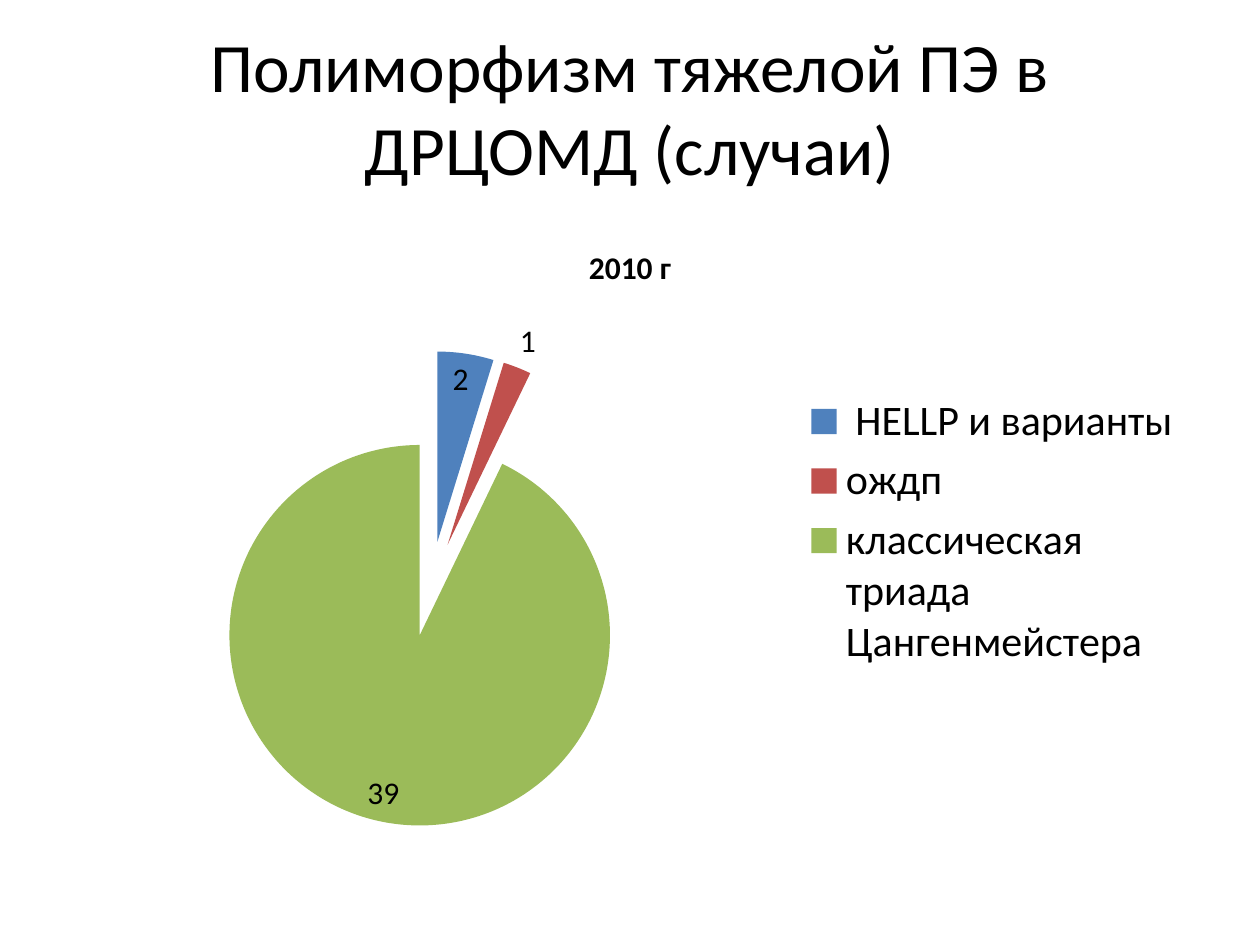
from lxml.etree import Element
from pptx import Presentation
from pptx.chart.data import CategoryChartData
from pptx.dml.color import RGBColor
from pptx.enum.chart import XL_CHART_TYPE, XL_LABEL_POSITION, XL_LEGEND_POSITION
from pptx.enum.text import MSO_ANCHOR, PP_ALIGN
from pptx.oxml.ns import qn
from pptx.util import Inches, Pt

BLACK = RGBColor(0x00, 0x00, 0x00)
BLUE = RGBColor(0x4F, 0x81, 0xBD)
RED = RGBColor(0xC0, 0x50, 0x4D)
GREEN = RGBColor(0x9B, 0xBB, 0x59)

CASES = [
    (" HELLP и варианты", 2, BLUE),
    ("ождп", 1, RED),
    ("классическая триада Цангенмейстера", 39, GREEN),
]


def style(font, size, bold=False):
    look = {"name": "Calibri", "size": Pt(size), "bold": bold}
    for key, value in look.items():
        setattr(font, key, value)
    font.color.rgb = BLACK


deck = Presentation()
deck.slide_width, deck.slide_height = Inches(10), Inches(7.5)
wide, high = deck.slide_width, deck.slide_height
left, width = int(wide * 0.05), int(wide * 0.9)
slide = deck.slides.add_slide(deck.slide_layouts[5])

# Title
title = slide.shapes.title
place = {"left": left, "top": int(high * 0.04),
         "width": width, "height": Inches(1.09)}
for key, value in place.items():
    setattr(title, key, value)
frame = title.text_frame
frame.text = "Полиморфизм тяжелой ПЭ в ДРЦОМД (случаи)"
frame.vertical_anchor = MSO_ANCHOR.MIDDLE
frame.paragraphs[0].alignment = PP_ALIGN.CENTER
style(frame.paragraphs[0].runs[0].font, 39.6)

# Pie of cases
data = CategoryChartData()
data.categories = [name for name, count, color in CASES]
data.add_series("Series 1", [count for name, count, color in CASES])
chart = slide.shapes.add_chart(
    XL_CHART_TYPE.PIE, left, int(high * 0.2333), width, int(high * 0.66), data
).chart
style(chart.font, 18)

chart.has_title = True
head = chart.chart_title.text_frame
head.text = "2010 г"
style(head.paragraphs[0].runs[0].font, 18, bold=True)

chart.has_legend = True
chart.legend.position = XL_LEGEND_POSITION.RIGHT
chart.legend.include_in_layout = False
style(chart.legend.font, 24)

plot = chart.plots[0]
plot.vary_by_categories = True
pie = plot.series[0]
burst = Element(qn("c:explosion"), val="25")
pie._element.find(qn("c:tx")).addnext(burst)
for spot, (name, count, color) in enumerate(CASES):
    fill = pie.points[spot].format.fill
    fill.solid()
    fill.fore_color.rgb = color

plot.has_data_labels = True
labels = plot.data_labels
flags = {"show_value": True, "show_percentage": False,
         "position": XL_LABEL_POSITION.BEST_FIT}
for key, value in flags.items():
    setattr(labels, key, value)
style(labels.font, 18)

deck.save("out.pptx")
